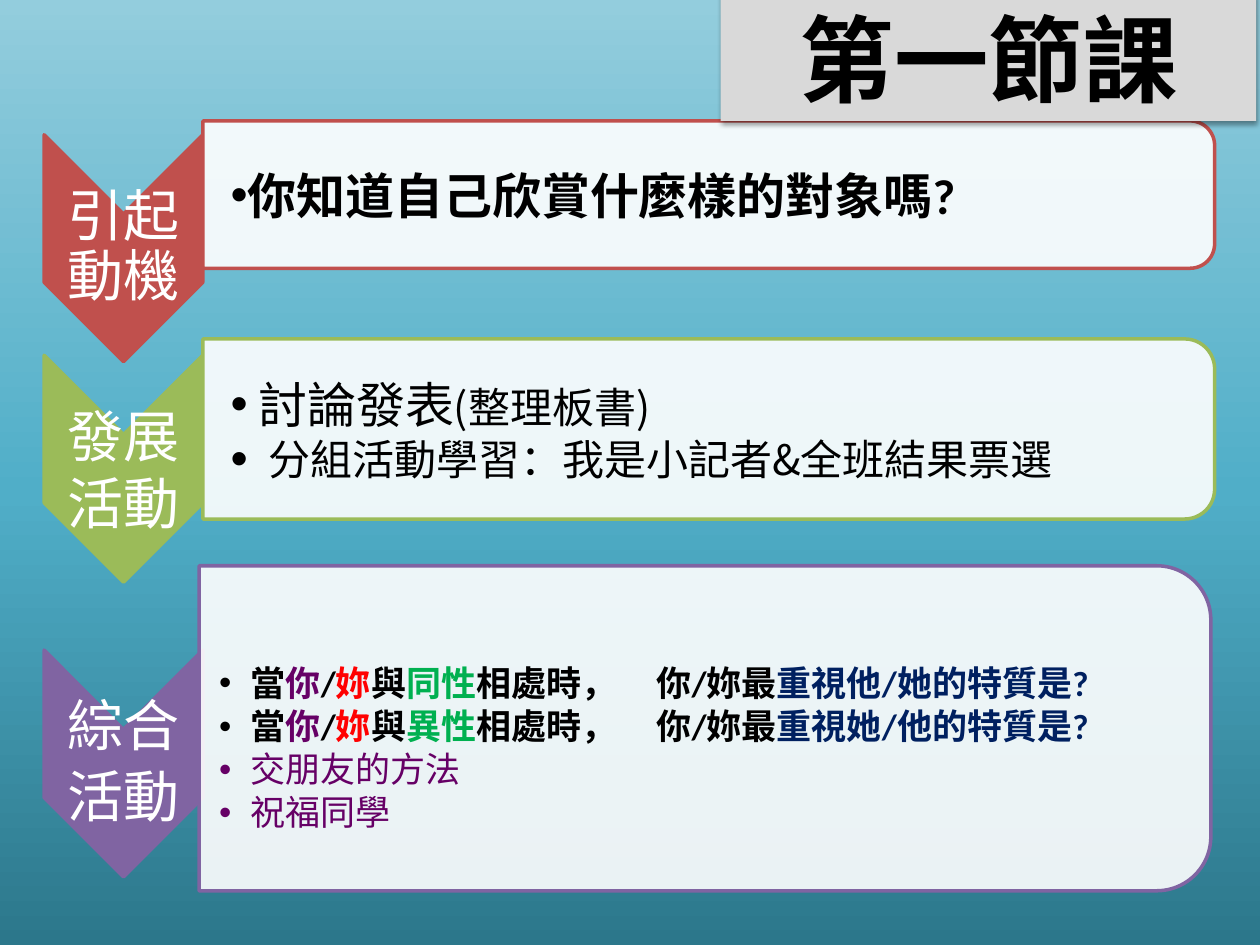
import copy

import pptx
import pptx.dml.color
import pptx.enum.shapes
import pptx.enum.text
import pptx.oxml
import pptx.oxml.ns
import pptx.util
from pptx.dml.color import RGBColor
from pptx.util import Inches

BLACK = RGBColor(0x00, 0x00, 0x00)
WHITE = RGBColor(0xFF, 0xFF, 0xFF)
GREY = RGBColor(0xD9, 0xD9, 0xD9)
BRICK = RGBColor(0xC0, 0x50, 0x4D)
OLIVE = RGBColor(0x9B, 0xBB, 0x59)
VIOLET = RGBColor(0x80, 0x64, 0xA2)
PURPLE = RGBColor(0x66, 0x00, 0x66)
RED = RGBColor(0xFF, 0x00, 0x00)
GREEN = RGBColor(0x00, 0xB0, 0x50)
NAVY = RGBColor(0x00, 0x20, 0x60)
BACKDROP = [(0, RGBColor(0x2C, 0x77, 0x8B)), (0.48, RGBColor(0x50, 0xAE, 0xC8)),
            (1, RGBColor(0x93, 0xCD, 0xDD))]
CJK, LATIN = "Noto Sans CJK SC", "Calibri"
SHAPE = pptx.enum.shapes.MSO_SHAPE
ALIGN = pptx.enum.text.PP_ALIGN
qn = pptx.oxml.ns.qn


def add_xml(parent, tag, **attrs):
    """Append a drawing element to parent."""
    child = parent.makeelement(qn(tag), {k: str(v) for k, v in attrs.items()})
    parent.append(child)
    return child


class Deck:
    """Style and current slide."""

    def __init__(self):
        self.prs = pptx.Presentation()
        self.prs.slide_width, self.prs.slide_height = Inches(10), Inches(7.5)
        self.s = self.prs.slides.add_slide(self.prs.slide_layouts[6])

    def background(self, stops):
        fill = self.s.background.fill
        fill.gradient()
        fill.gradient_angle = 90
        stop_list = next(self.s.element.iter(qn("a:gsLst")))
        stop_list.append(copy.deepcopy(stop_list[-1]))
        for stop, (position, color) in zip(fill.gradient_stops, stops):
            stop.position = position
            stop.color.rgb = color

    def shape(self, kind, x, y, w, h, fill, line=None, turned=False, alpha=None):
        """Place a shape by its visible box; turned shapes are rotated by 90 degrees."""
        if turned:
            x, y, w, h = x + (w - h) / 2, y + (h - w) / 2, h, w
        sp = self.s.shapes.add_shape(kind, Inches(x), Inches(y), Inches(w), Inches(h))
        sp.rotation = 90 if turned else 0
        sp.shadow.inherit = False
        sp.fill.solid()
        sp.fill.fore_color.rgb = fill
        if alpha:
            add_xml(next(sp.element.spPr.iter(qn("a:srgbClr"))), "a:alpha", val=alpha * 1000)
        if line is None:
            sp.line.fill.background()
        else:
            sp.line.color.rgb = line
            sp.line.width = pptx.util.Pt(2)
        return sp

    def text_box(self, x, y, w, h, left=0.02, top=0.02, inset=0.02):
        tf = self.s.shapes.add_textbox(Inches(x), Inches(y), Inches(w), Inches(h)).text_frame
        tf.word_wrap = True
        tf.vertical_anchor = pptx.enum.text.MSO_ANCHOR.MIDDLE
        tf.margin_left, tf.margin_top = Inches(left), Inches(top)
        tf.margin_right = tf.margin_bottom = Inches(inset)
        return tf

    def paragraph(self, tf, runs, font, align=ALIGN.LEFT, spacing=1.0, after=0,
                  bullet=None, indent=0.0, tab=None):
        """Runs are (text, size, colour, bold); bullet is its size in percent."""
        p = tf.paragraphs[0] if not tf.paragraphs[0].runs else tf.add_paragraph()
        p.alignment, p.line_spacing = align, spacing
        p.space_after = pptx.util.Pt(after)
        if bullet:
            ppr = p._p.get_or_add_pPr()
            ppr.set("marL", str(Inches(indent)))
            ppr.set("indent", str(-Inches(indent)))
            add_xml(ppr, "a:buSzPct", val=bullet * 1000)
            add_xml(ppr, "a:buFont", typeface="Arial")
            add_xml(ppr, "a:buChar", char="•")
            if tab:
                add_xml(add_xml(ppr, "a:tabLst"), "a:tab", pos=Inches(tab), algn="l")
        for text, size, color, bold in runs:
            r = p.add_run()
            r.text = text
            r.font.name, r.font.size, r.font.bold = font, pptx.util.Pt(size), bold
            r.font.color.rgb = color

    def chevron(self, y, words, color, **style):
        self.shape(SHAPE.CHEVRON, 0.35, y, 1.26, 1.8, color, color, turned=True)
        tf = self.text_box(0.35, y + 0.63, 1.26, 0.54)
        for word in words:
            self.paragraph(tf, [(word, 32, WHITE, False)], CJK, ALIGN.CENTER, **style)

    def panel(self, x, y, h, color, **insets):
        """Draw a panel with two round corners and return its text frame."""
        self.shape(SHAPE.ROUND_2_SAME_RECTANGLE, x, y, 8.03, h, WHITE, color,
                   turned=True, alpha=90)
        corner = 0.05 * h
        return self.text_box(x, y + corner, 8.03 - corner, h - 2 * corner, **insets)

    def title(self, text):
        sp = self.shape(SHAPE.RECTANGLE, 5.72, -0.05, 4.25, 1.01, GREY)
        shadow = add_xml(sp.element.spPr.find(qn("a:effectLst")), "a:outerShdw",
                         blurRad=pptx.util.Pt(3.1), dist=pptx.util.Pt(1.6),
                         dir=90 * 60000, rotWithShape=0)
        add_xml(add_xml(shadow, "a:srgbClr", val=BLACK), "a:alpha", val=38000)
        tf = sp.text_frame
        tf.word_wrap = True
        tf.auto_size = pptx.enum.text.MSO_AUTO_SIZE.SHAPE_TO_FIT_TEXT
        self.paragraph(tf, [(text, 54, BLACK, True)], CJK, ALIGN.CENTER)


def main():
    deck = Deck()
    deck.background(BACKDROP)

    # Warm-up
    deck.chevron(1.07, ["引起", "動機"], BRICK, spacing=0.9)
    tf = deck.panel(1.61, 0.96, 1.17, BRICK, left=0.22)
    deck.paragraph(tf, [("你知道自己欣賞什麼樣的對象嗎?", 28, BLACK, True)], LATIN, bullet=100)

    # Main activity
    deck.chevron(2.82, ["發展", "活動"], OLIVE)
    tf = deck.panel(1.61, 2.69, 1.43, OLIVE, left=0.22)
    deck.paragraph(tf, [("討論發表", 28, BLACK, False), ("(整理板書)", 24, BLACK, False)],
                   CJK, bullet=100, indent=0.22)
    deck.paragraph(tf, [("分組活動學習：我是小記者&全班結果票選", 24, BLACK, False)],
                   CJK, bullet=117, indent=0.3)

    # Wrap-up
    deck.chevron(5.16, ["綜合", "活動"], VIOLET, spacing=0.9, after=6)
    tf = deck.panel(1.58, 4.49, 2.58, VIOLET, left=0.16, top=0.35, inset=0.01)
    listing = dict(spacing=0.9, after=3, bullet=100, indent=0.25, tab=3.47)
    for group, trait in [("同性", "重視他/她的特質是?"), ("異性", "重視她/他的特質是?")]:
        parts = [("當", BLACK), ("你", PURPLE), ("/", BLACK), ("妳", RED), ("與", BLACK),
                 (group, GREEN), ("相處時，\t你/妳最", BLACK), (trait, NAVY)]
        deck.paragraph(tf, [(text, 20, color, True) for text, color in parts], LATIN, **listing)
    for text in ["交朋友的方法", "祝福同學"]:
        deck.paragraph(tf, [(text, 20, PURPLE, False)], LATIN, **listing)

    deck.title("第一節課")
    deck.prs.save("out.pptx")


if __name__ == "__main__":
    main()
